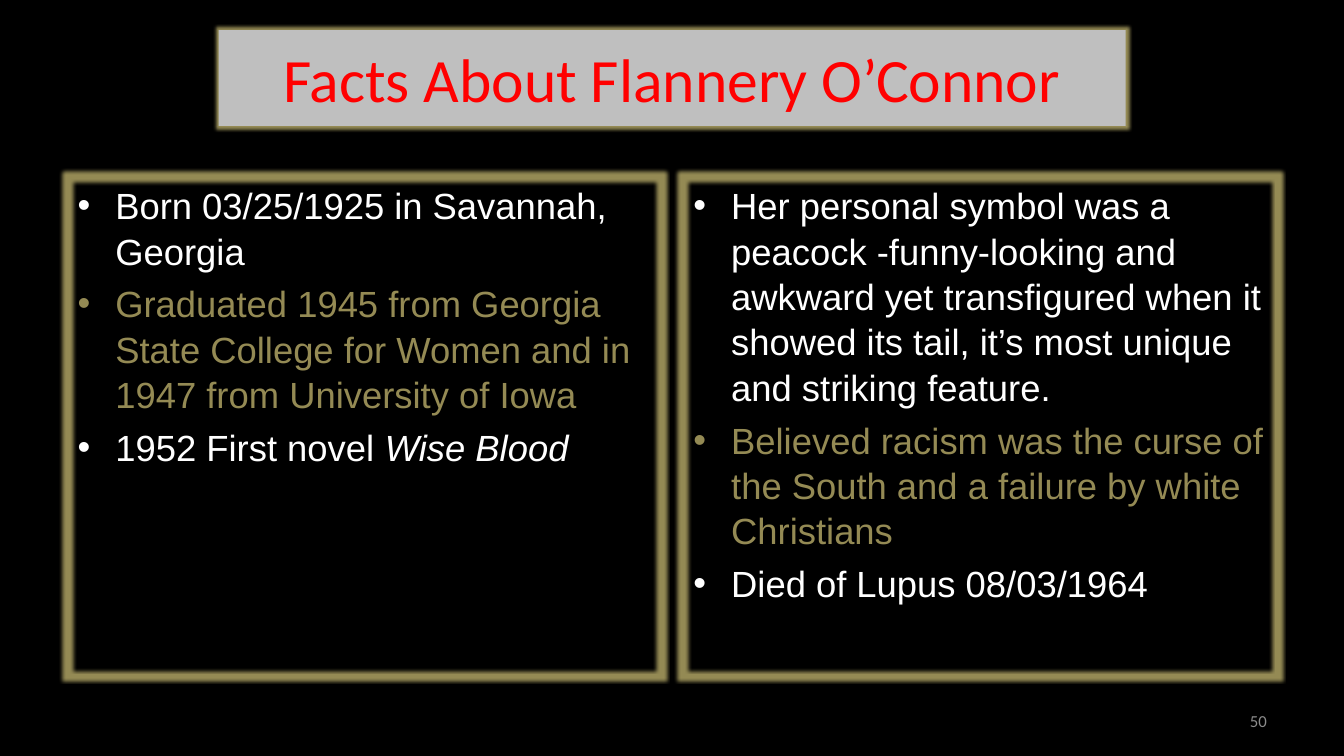
from dataclasses import dataclass

import lxml.etree
import pptx
import pptx.dml.color
import pptx.enum.text
import pptx.oxml.ns
import pptx.presentation
import pptx.shapes.base
import pptx.slide
import pptx.text.text
import pptx.util

Cm = pptx.util.Cm
Pt = pptx.util.Pt
RGBColor = pptx.dml.color.RGBColor

BLACK = RGBColor(0x00, 0x00, 0x00)
WHITE = RGBColor(0xFF, 0xFF, 0xFF)
RED = RGBColor(0xFF, 0x00, 0x00)
SILVER = RGBColor(0xBF, 0xBF, 0xBF)
GRAY = RGBColor(0x8C, 0x8C, 0x8C)
OLIVE = RGBColor(0x94, 0x8A, 0x54)

PANEL_LEFT = 1.7
PANEL_STEP = 15.52


@dataclass(frozen=True)
class Fact:
    text: str
    color: RGBColor = WHITE
    italic_ending: str = ""


FACT_PANELS: list[list[Fact]] = [
    [
        Fact("Born 03/25/1925 in Savannah, Georgia"),
        Fact("Graduated 1945 from Georgia State College for Women and in 1947 from University of Iowa", OLIVE),
        Fact("1952 First novel ", italic_ending="Wise Blood"),
    ],
    [
        Fact(
            "Her personal symbol was a peacock -funny-looking and awkward yet transfigured "
            "when it showed its tail, it’s most unique and striking feature."
        ),
        Fact("Believed racism was the curse of the South and a failure by white Christians", OLIVE),
        Fact("Died of Lupus 08/03/1964"),
    ],
]


def place(shape: pptx.shapes.base.BaseShape, left: float, top: float, width: float, height: float) -> None:
    shape.left, shape.top, shape.width, shape.height = Cm(left), Cm(top), Cm(width), Cm(height)


def add_run(
    paragraph: pptx.text.text._Paragraph, text: str, font: str, size: float, color: RGBColor, italic: bool = False
) -> None:
    run = paragraph.add_run()
    run.text = text
    run.font.name = font
    run.font.size = Pt(size)
    run.font.color.rgb = color
    if italic:
        run.font.italic = True


def add_glow(shape: pptx.shapes.base.BaseShape) -> None:
    qualify = pptx.oxml.ns.qn
    effects = lxml.etree.SubElement(shape._element.spPr, qualify("a:effectLst"))
    glow = lxml.etree.SubElement(effects, qualify("a:glow"), rad=str(Pt(5)))
    lxml.etree.SubElement(glow, qualify("a:srgbClr"), val=str(OLIVE))


def fill_title(slide: pptx.slide.Slide) -> None:
    title = slide.shapes.title
    place(title, 5.51, 0.76, 22.86, 2.41)
    title.fill.solid()
    title.fill.fore_color.rgb = SILVER
    add_glow(title)
    frame = title.text_frame
    frame.auto_size = pptx.enum.text.MSO_AUTO_SIZE.NONE
    frame.vertical_anchor = pptx.enum.text.MSO_ANCHOR.MIDDLE
    paragraph = frame.paragraphs[0]
    paragraph.alignment = pptx.enum.text.PP_ALIGN.CENTER
    add_run(paragraph, "Facts About Flannery O’Connor", "Calibri", 44, RED)


def fill_panel(panel: pptx.shapes.base.BaseShape, left: float, facts: list[Fact]) -> None:
    place(panel, left, 4.45, 14.96, 12.57)
    panel.line.color.rgb = OLIVE
    panel.line.width = Pt(2)
    add_glow(panel)
    frame = panel.text_frame
    frame.auto_size = pptx.enum.text.MSO_AUTO_SIZE.NONE
    for index, fact in enumerate(facts):
        paragraph = frame.add_paragraph() if index else frame.paragraphs[0]
        paragraph.space_before = Pt(5.2)
        paragraph.line_spacing = 1.04
        add_run(paragraph, fact.text, "Arial", 26, fact.color)
        if fact.italic_ending:
            add_run(paragraph, fact.italic_ending, "Arial", 26, fact.color, italic=True)


def add_slide_number(slide: pptx.slide.Slide) -> None:
    number = slide.shapes.add_textbox(Cm(24.28), Cm(17.65), Cm(7.9), Cm(1.02))
    number.text_frame.word_wrap = True
    number.text_frame.vertical_anchor = pptx.enum.text.MSO_ANCHOR.MIDDLE
    paragraph = number.text_frame.paragraphs[0]
    paragraph.alignment = pptx.enum.text.PP_ALIGN.RIGHT
    add_run(paragraph, "50", "Calibri", 12, GRAY)


def main() -> None:
    presentation = pptx.Presentation()
    presentation.slide_width = Cm(33.87)
    presentation.slide_height = Cm(19.05)
    slide = presentation.slides.add_slide(presentation.slide_layouts.get_by_name("Two Content"))
    slide.background.fill.solid()
    slide.background.fill.fore_color.rgb = BLACK
    fill_title(slide)
    for index, facts in enumerate(FACT_PANELS):
        fill_panel(slide.placeholders[index + 1], PANEL_LEFT + index * PANEL_STEP, facts)
    add_slide_number(slide)
    presentation.save("out.pptx")


if __name__ == "__main__":
    main()
